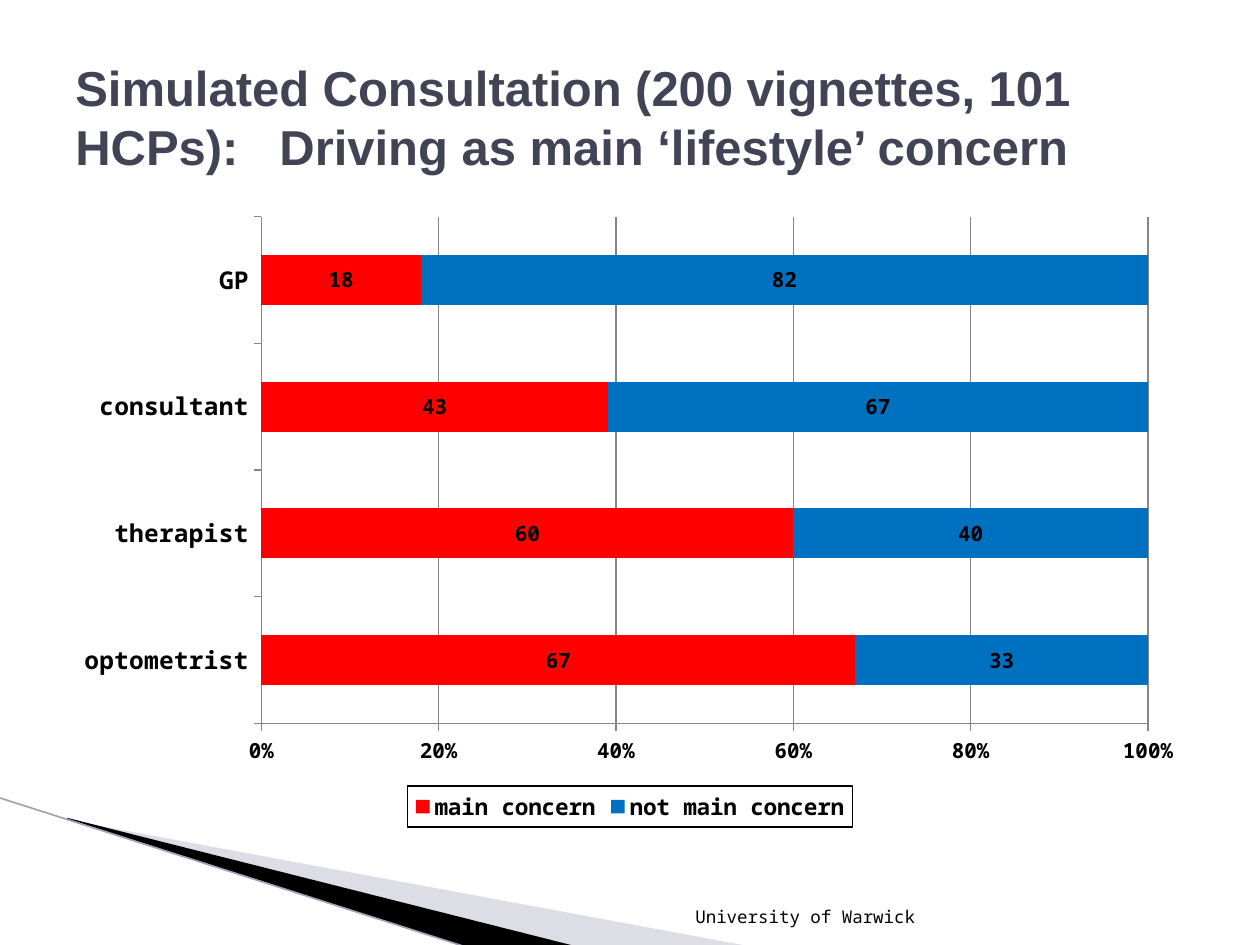
"""Build a slide charting driving as a main lifestyle concern by profession."""
import pptx
import pptx.chart.data
import pptx.dml.color
import pptx.enum.chart
import pptx.enum.dml
import pptx.enum.shapes
import pptx.enum.text
import pptx.oxml
import pptx.oxml.ns
import pptx.util
from lxml import etree

Inches = pptx.util.Inches
Charts = pptx.enum.chart
Align = pptx.enum.text.PP_ALIGN
Anchor = pptx.enum.text.MSO_ANCHOR

TITLE = "Simulated Consultation (200 vignettes, 101 HCPs):\tDriving as main ‘lifestyle’ concern"
FOOTER = "University of Warwick"
PROFESSIONS = ["optometrist", "therapist", "consultant", "GP"]
CONCERNS = [
    ("main concern", [67, 60, 43, 18], "main"),
    ("not main concern", [33, 40, 67, 82], "other"),
]
WEDGES = [
    ([(0.55, 6.51), (5.95, 7.51), (4.56, 7.51), (0.55, 6.5)], "wedge", 40),
    ([(0.53, 6.49), (4.57, 7.51), (3.72, 7.52), (0.54, 6.5)], "text", 100),
]
EDGE = [(-0.01, 6.33), (3.71, 7.52)]
PLOT_AREA = (0.175, 0.02, 0.782, 0.814)
LEGEND_AREA = (0.304, 0.934, 0.392, 0.066)
THEME = {
    "colors": {"text": "000000", "title": "424456", "main": "FF0000", "other": "0070C0",
               "wedge": "AAAABF", "edge": "A1A1B9", "grid": "868686"},
    "sizes": {"title": 28, "footer": 10, "category": 14, "value": 11.9, "legend": 13, "label": 12},
    "fonts": {"title": "Arial", "body": "Noto Sans Mono"},
}


def color(name):
    return pptx.dml.color.RGBColor.from_string(THEME["colors"][name])


def style_font(font, size, ink="text", face="body", bold=True):
    font.name = THEME["fonts"][face]
    font.size = pptx.util.Pt(THEME["sizes"][size])
    font.bold = bold
    font.color.rgb = color(ink)


def add_text(page, text, area, anchor, align):
    box = page.shapes.add_textbox(*map(Inches, area))
    frame = box.text_frame
    frame.word_wrap = True
    frame.vertical_anchor = anchor
    frame.text = text
    para = frame.paragraphs[0]
    para.alignment = align
    return para


def add_wedge(page, points, fill, opacity):
    builder = page.shapes.build_freeform(*map(Inches, points[0]), scale=1.0)
    builder.add_line_segments([tuple(map(Inches, point)) for point in points[1:]])
    wedge = builder.convert_to_shape()
    wedge.shadow.inherit = False
    wedge.line.fill.background()
    wedge.fill.solid()
    wedge.fill.fore_color.rgb = color(fill)
    if opacity < 100:
        tint = wedge.fill._xPr.find(".//" + pptx.oxml.ns.qn("a:srgbClr"))
        etree.SubElement(tint, pptx.oxml.ns.qn("a:alpha"), val=str(opacity * 1000))


def add_edge(page):
    start, end = EDGE
    edge = page.shapes.add_connector(pptx.enum.shapes.MSO_CONNECTOR.STRAIGHT, *map(Inches, start + end))
    edge.line.color.rgb = color("edge")
    edge.line.width = pptx.util.Pt(0.95)
    etree.SubElement(edge._element.spPr, pptx.oxml.ns.qn("a:effectLst"))


def place(element, area, inner=False):
    for old in element.findall(pptx.oxml.ns.qn("c:layout")):
        element.remove(old)
    layout = etree.Element(pptx.oxml.ns.qn("c:layout"))
    manual = etree.SubElement(layout, pptx.oxml.ns.qn("c:manualLayout"))
    settings = [("layoutTarget", "inner")] if inner else []
    settings += [("xMode", "edge"), ("yMode", "edge"), *zip("xywh", map(str, area))]
    for tag, value in settings:
        etree.SubElement(manual, pptx.oxml.ns.qn("c:" + tag), val=value)
    element.insert(0 if inner else 1, layout)


def add_chart(page):
    data = pptx.chart.data.CategoryChartData()
    data.categories = PROFESSIONS
    for name, values, _ in CONCERNS:
        data.add_series(name, values)
    area = map(Inches, (0.5, 1.62, 9, 4.95))
    chart = page.shapes.add_chart(Charts.XL_CHART_TYPE.BAR_STACKED_100, *area, data).chart
    chart.has_title = False
    style_font(chart.font, "footer", bold=False)
    plot = chart.plots[0]
    plot.gap_width = 154
    plot.overlap = 100
    plot.vary_by_categories = False
    for series, (_, _, fill) in zip(plot.series, CONCERNS):
        series.format.fill.solid()
        series.format.fill.fore_color.rgb = color(fill)
        series.data_labels.show_value = True
        series.data_labels.position = Charts.XL_LABEL_POSITION.CENTER
        style_font(series.data_labels.font, "label")
    for axis, size in ((chart.category_axis, "category"), (chart.value_axis, "value")):
        axis.major_tick_mark = Charts.XL_TICK_MARK.OUTSIDE
        axis.minor_tick_mark = Charts.XL_TICK_MARK.NONE
        axis.format.line.color.rgb = color("grid")
        style_font(axis.tick_labels.font, size)
    scale = chart.value_axis
    scale.minimum_scale, scale.maximum_scale, scale.major_unit = 0, 1, 0.2
    scale.has_major_gridlines = True
    scale.major_gridlines.format.line.color.rgb = color("grid")
    scale.tick_labels.number_format = "0%"
    scale.tick_labels.number_format_is_linked = False
    chart.has_legend = True
    legend = chart.legend
    legend.position = Charts.XL_LEGEND_POSITION.BOTTOM
    legend.include_in_layout = False
    style_font(legend.font, "legend")
    place(chart._chartSpace.chart.plotArea, PLOT_AREA, inner=True)
    place(legend._element, LEGEND_AREA)
    border = pptx.oxml.parse_xml(
        f'<c:spPr {pptx.oxml.ns.nsdecls("c", "a")}><a:ln w="9525"><a:solidFill>'
        f'<a:srgbClr val="{THEME["colors"]["text"]}"/></a:solidFill></a:ln></c:spPr>')
    legend._element.find(pptx.oxml.ns.qn("c:txPr")).addprevious(border)


def main():
    deck = pptx.Presentation()
    deck.slide_width, deck.slide_height = Inches(10), Inches(7.5)
    page = deck.slides.add_slide(deck.slide_layouts[6])
    for wedge in WEDGES:
        add_wedge(page, *wedge)
    add_edge(page)
    footer = add_text(page, FOOTER, (4.79, 7.01, 2.57, 0.4), Anchor.BOTTOM, Align.RIGHT)
    style_font(footer.runs[0].font, "footer", bold=False)
    title = add_text(page, TITLE, (0.5, 0.3, 9, 1.25), Anchor.MIDDLE, Align.LEFT)
    stops = etree.SubElement(title._p.get_or_add_pPr(), pptx.oxml.ns.qn("a:tabLst"))
    etree.SubElement(stops, pptx.oxml.ns.qn("a:tab"), pos=str(Inches(1.62)), algn="l")
    for span in title.runs:
        style_font(span.font, "title", "title", "title")
    add_chart(page)
    deck.save("out.pptx")


if __name__ == "__main__":
    main()
